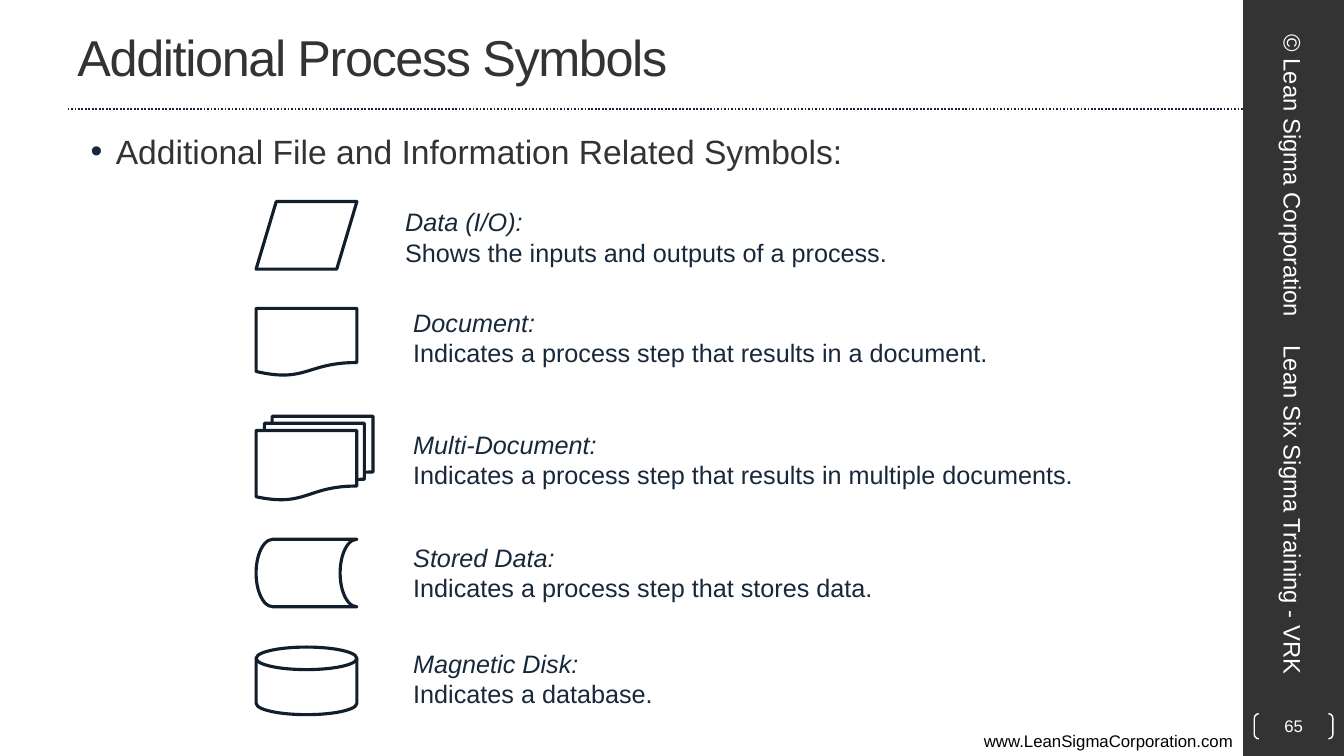
from dataclasses import dataclass

from lxml.etree import SubElement
from pptx import Presentation
from pptx.dml.color import RGBColor
from pptx.enum.dml import MSO_LINE
from pptx.enum.shapes import MSO_CONNECTOR, MSO_SHAPE
from pptx.enum.text import MSO_ANCHOR, PP_ALIGN
from pptx.oxml.ns import qn
from pptx.util import Inches, Pt


@dataclass(frozen=True)
class Theme:
    font: str = "Arial"
    charcoal: str = "333333"
    navy: str = "18283B"
    outline: str = "121E2C"
    rule: str = "17273B"
    white: str = "FFFFFF"
    black: str = "000000"
    title_size: int = 36
    body_size: int = 24
    label_size: int = 18
    sidebar_size: int = 17
    small_size: int = 12


class SlideBuilder:
    def __init__(self, slide, theme):
        self.slide = slide
        self.theme = theme

    def style_paragraph(self, paragraph, size, color, align=PP_ALIGN.LEFT, italic=False):
        paragraph.alignment = align
        for run in paragraph.runs:
            run.font.name = self.theme.font
            run.font.size = Pt(size)
            run.font.italic = italic
            run.font.color.rgb = RGBColor.from_string(color)

    def text(self, box, content, size, color, align=PP_ALIGN.LEFT,
             anchor=MSO_ANCHOR.TOP, rotation=0):
        shape = self.slide.shapes.add_textbox(*map(Inches, box))
        shape.rotation = rotation
        text_frame = shape.text_frame
        text_frame.word_wrap = True
        text_frame.vertical_anchor = anchor
        text_frame.text = content
        for paragraph in text_frame.paragraphs:
            self.style_paragraph(paragraph, size, color, align)
        return text_frame

    def title(self, box, content):
        text_frame = self.text(box, content, self.theme.title_size,
                               self.theme.charcoal, anchor=MSO_ANCHOR.MIDDLE)
        # Tighten the letter spacing by one point
        text_frame.paragraphs[0].runs[0].font._element.set("spc", "-100")

    def bullet(self, box, content):
        text_frame = self.text(box, content, self.theme.body_size, self.theme.charcoal)
        properties = text_frame.paragraphs[0]._p.get_or_add_pPr()
        properties.set("marL", str(Inches(0.38)))
        properties.set("indent", str(Inches(-0.25)))
        bullet_color = SubElement(properties, qn("a:buClr"))
        SubElement(bullet_color, qn("a:srgbClr"), val=self.theme.navy)
        SubElement(properties, qn("a:buFont"), typeface=self.theme.font)
        SubElement(properties, qn("a:buChar"), char="•")

    def definition(self, box, term, meaning):
        text_frame = self.text(box, f"{term}\n{meaning}",
                               self.theme.label_size, self.theme.navy)
        text_frame.paragraphs[0].runs[0].font.italic = True

    def shape(self, kind, box, fill=None, line=None, width=1):
        shape = self.slide.shapes.add_shape(kind, *map(Inches, box))
        shape.shadow.inherit = False
        if fill:
            shape.fill.solid()
            shape.fill.fore_color.rgb = RGBColor.from_string(fill)
        else:
            shape.fill.background()
        if line:
            shape.line.color.rgb = RGBColor.from_string(line)
            shape.line.width = Pt(width)
        else:
            shape.line.fill.background()
        return shape

    def dotted_rule(self, left, right, top):
        rule = self.slide.shapes.add_connector(
            MSO_CONNECTOR.STRAIGHT, Inches(left), Inches(top), Inches(right), Inches(top))
        rule.line.color.rgb = RGBColor.from_string(self.theme.rule)
        rule.line.width = Pt(1.25)
        rule.line.dash_style = MSO_LINE.ROUND_DOT
        SubElement(rule._element.spPr, qn("a:effectLst"))

    def page_number(self, box, number):
        bracket = self.shape(MSO_SHAPE.DOUBLE_BRACKET, box, line=self.theme.white)
        bracket.adjustments[0] = 0.18
        text_frame = bracket.text_frame
        text_frame.margin_left = text_frame.margin_right = 0
        text_frame.margin_top = text_frame.margin_bottom = 0
        text_frame.vertical_anchor = MSO_ANCHOR.MIDDLE
        text_frame.text = number
        self.style_paragraph(text_frame.paragraphs[0], self.theme.small_size,
                             self.theme.white, PP_ALIGN.CENTER)


# Symbol, its top and size, then the left and top of its definition
SYMBOLS = [
    (MSO_SHAPE.FLOWCHART_DATA, 2, 1, 0.67, 3.92, 2,
     "Data (I/O):", "Shows the inputs and outputs of a process."),
    (MSO_SHAPE.FLOWCHART_DOCUMENT, 3.06, 1, 0.67, 4, 3,
     "Document:", "Indicates a process step that results in a document."),
    (MSO_SHAPE.FLOWCHART_MULTIDOCUMENT, 4.13, 1.16, 0.83, 4, 4.21,
     "Multi-Document:", "Indicates a process step that results in multiple documents."),
    (MSO_SHAPE.FLOWCHART_STORED_DATA, 5.35, 1, 0.67, 4, 5.33,
     "Stored Data:", "Indicates a process step that stores data."),
    (MSO_SHAPE.FLOWCHART_MAGNETIC_DISK, 6.42, 1, 0.67, 4, 6.38,
     "Magnetic Disk:", "Indicates a database."),
]
SYMBOL_LEFT = 2.54
DEFINITION_RIGHT = 10.92
SIDEBAR_LEFT = 12.33


def main():
    presentation = Presentation()
    presentation.slide_width = Inches(13.33)
    presentation.slide_height = Inches(7.5)
    slide = presentation.slides.add_slide(presentation.slide_layouts[6])
    theme = Theme()
    builder = SlideBuilder(slide, theme)

    # Sidebar, rule and web address
    builder.shape(MSO_SHAPE.RECTANGLE, (SIDEBAR_LEFT, 0, 1, 7.5), fill=theme.charcoal)
    builder.dotted_rule(0.67, SIDEBAR_LEFT, 1.08)
    builder.text((0, 7.2, SIDEBAR_LEFT, 0.3), "www.LeanSigmaCorporation.com",
                 theme.small_size, theme.black, PP_ALIGN.RIGHT)

    # Title and heading
    builder.title((0.67, 0.03, 11.11, 1.05), "Additional Process Symbols")
    builder.bullet((0.67, 1.25, 11.11, 0.6),
                   "Additional File and Information Related Symbols:")

    # Sidebar texts and page number
    builder.page_number((12.44, 7.08, 0.78, 0.25), "65")
    builder.text((11.24, 1.48, 3.17, 0.53), "© Lean Sigma Corporation", theme.sidebar_size,
                 theme.white, PP_ALIGN.CENTER, MSO_ANCHOR.MIDDLE, rotation=90)
    builder.text((10.99, 4.9, 3.67, 0.53), "Lean Six Sigma Training - VRK", theme.sidebar_size,
                 theme.white, anchor=MSO_ANCHOR.MIDDLE, rotation=90)

    # Symbols with their definitions
    for kind, top, width, height, text_left, text_top, term, meaning in SYMBOLS:
        builder.shape(kind, (SYMBOL_LEFT, top, width, height), line=theme.outline, width=2.25)
        builder.definition((text_left, text_top, DEFINITION_RIGHT - text_left, 0.71),
                           term, meaning)

    presentation.save("out.pptx")


if __name__ == "__main__":
    main()
